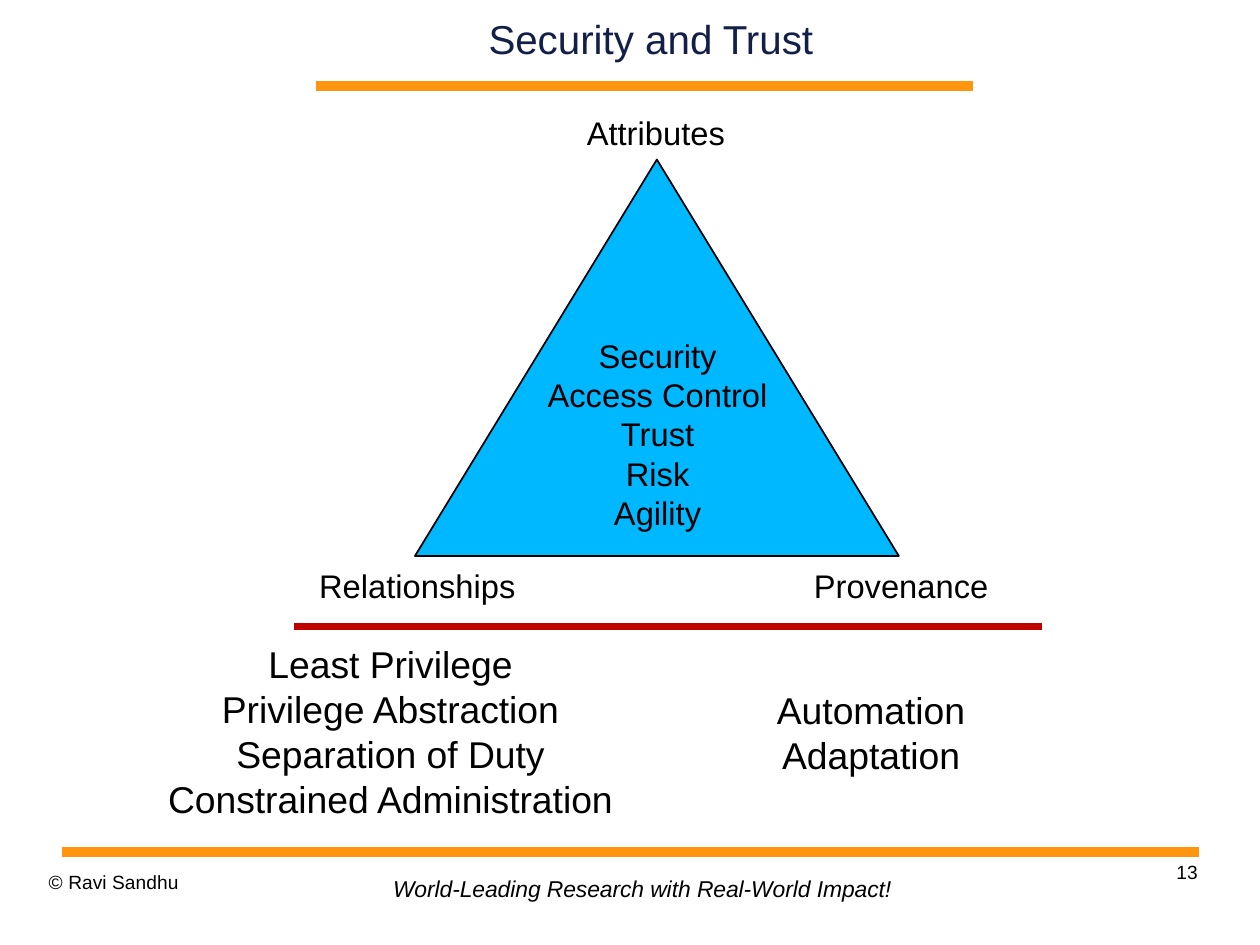
from pptx import Presentation
from pptx.dml.color import RGBColor
from pptx.enum.shapes import MSO_CONNECTOR, MSO_SHAPE
from pptx.enum.text import MSO_ANCHOR, MSO_AUTO_SIZE, PP_ALIGN
from pptx.oxml.ns import qn
from pptx.util import Inches, Pt
from lxml import etree

LEFT, CENTER, RIGHT = PP_ALIGN.LEFT, PP_ALIGN.CENTER, PP_ALIGN.RIGHT
TOP, MIDDLE = MSO_ANCHOR.TOP, MSO_ANCHOR.MIDDLE
FIXED, GROW = MSO_AUTO_SIZE.NONE, MSO_AUTO_SIZE.SHAPE_TO_FIT_TEXT
STRAIGHT, TRIANGLE = MSO_CONNECTOR.STRAIGHT, MSO_SHAPE.ISOSCELES_TRIANGLE

BLACK = RGBColor(0x00, 0x00, 0x00)
NAVY = RGBColor(0x13, 0x1F, 0x49)
ORANGE = RGBColor(0xFF, 0x95, 0x0E)
SKY = RGBColor(0x00, 0xB8, 0xFF)
RED = RGBColor(0xC0, 0x00, 0x00)


class SlideBuilder:
    font_name = "Arial"

    def __init__(self, slide):
        self.shapes = slide.shapes

    def rule(self, left, right, y, color, width):
        line = self.shapes.add_connector(
            STRAIGHT, Inches(left), Inches(y), Inches(right), Inches(y))
        line.line.color.rgb = color
        line.line.width = Pt(width)
        etree.SubElement(line._element.spPr, qn("a:effectLst"))

    def triangle(self, left, top, width, height, color):
        shape = self.shapes.add_shape(
            TRIANGLE, Inches(left), Inches(top), Inches(width), Inches(height))
        shape.shadow.inherit = False
        shape.fill.solid()
        shape.fill.fore_color.rgb = color
        shape.line.color.rgb = BLACK
        shape.line.width = Pt(0.75)

    def text(self, box, lines, size, color=BLACK, align=CENTER, anchor=TOP,
             insets=(0.1, 0.05), fit=GROW, wrap=True, spacing=None, italic=False):
        frame = self.shapes.add_textbox(*map(Inches, box)).text_frame
        across, down = map(Inches, insets)
        frame_format = {
            "word_wrap": wrap, "auto_size": fit, "vertical_anchor": anchor,
            "margin_left": across, "margin_right": across,
            "margin_top": down, "margin_bottom": down,
        }
        for name, value in frame_format.items():
            setattr(frame, name, value)

        font_format = {"name": self.font_name, "size": Pt(size), "italic": italic}
        frame.text = "\n".join(lines)
        for paragraph in frame.paragraphs:
            paragraph.alignment = align
            paragraph.line_spacing = spacing
            font = paragraph.runs[0].font
            for name, value in font_format.items():
                setattr(font, name, value)
            font.color.rgb = color


def main():
    prs = Presentation()
    prs.slide_width = Inches(7.5)
    prs.slide_height = prs.slide_width * 3 // 4
    builder = SlideBuilder(prs.slides.add_slide(prs.slide_layouts[6]))

    # Title and footer
    flush = {"insets": (0, 0), "fit": FIXED}
    builder.rule(1.88, 5.79, 0.51, ORANGE, 4.31)
    builder.rule(0.37, 7.14, 5.07, ORANGE, 4.31)
    builder.text((5.38, 5.12, 1.75, 0.39), ["13"], 8.25,
                 align=RIGHT, spacing=1.01, **flush)
    builder.text((0.29, 5.18, 1.75, 0.29), ["© Ravi Sandhu"], 8.25,
                 align=LEFT, spacing=1.01, **flush)
    builder.text((2.28, 5.18, 3.11, 0.23),
                 ["World-Leading Research with Real-World Impact!"], 9.75,
                 align=LEFT, insets=(0.06, 0.03), wrap=False, italic=True)
    builder.text((1.94, 0.04, 3.87, 0.38), ["Security and Trust"], 17.25,
                 color=NAVY, anchor=MIDDLE, **flush)

    # Triangle with its goals and corner labels
    builder.triangle(2.47, 0.95, 2.88, 2.36, SKY)
    builder.text((3.13, 1.95, 1.57, 1.28),
                 ["Security", "Access Control", "Trust", "Risk", "Agility"], 14)
    corners = [("Attributes", 3.12, 0.62), ("Relationships", 1.7, 3.32),
               ("Provenance", 4.58, 3.32)]
    for label, left, top in corners:
        builder.text((left, top, 1.57, 0.34), [label], 14)

    # Principles below the red rule
    builder.rule(1.75, 6.2, 3.73, RED, 3)
    builder.text((0.72, 3.77, 3.21, 1.18),
                 ["Least Privilege", "Privilege Abstraction",
                  "Separation of Duty", "Constrained Administration"], 16)
    builder.text((4.19, 4.04, 1.99, 0.64), ["Automation", "Adaptation"], 16)

    prs.save("out.pptx")


if __name__ == "__main__":
    main()
